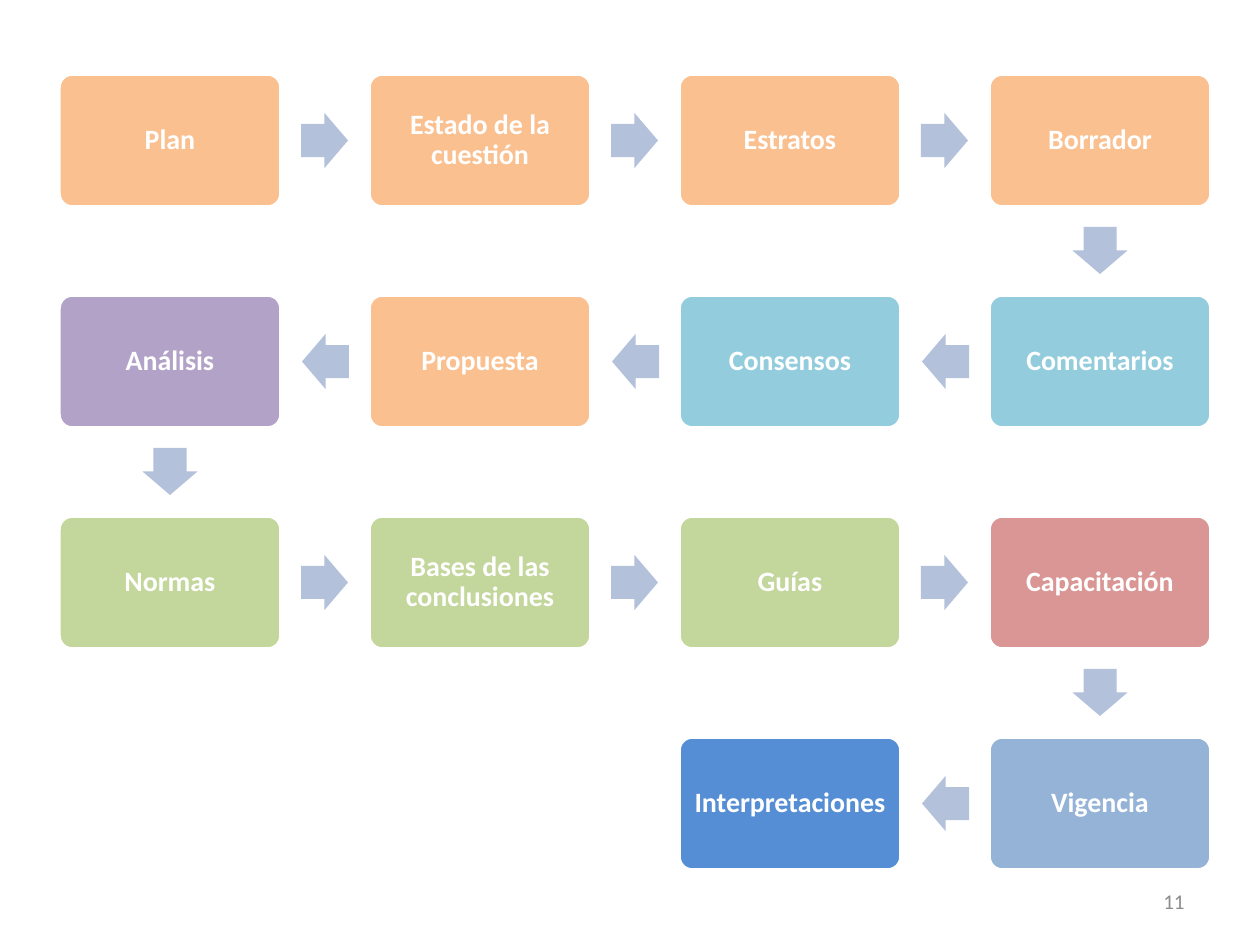
from pptx import Presentation
from pptx.dml.color import RGBColor
from pptx.enum.shapes import MSO_SHAPE
from pptx.enum.text import MSO_ANCHOR, PP_ALIGN
from pptx.util import Pt

SCALE = 914400 / 126  # EMU per px

COLORS = {
    "orange": "FAC090", "aqua": "93CDDD", "purple": "B3A2C7",
    "green": "C3D69B", "red": "D99694", "pale_blue": "95B3D7",
    "blue": "558ED5", "arrow": "B3C1DB", "white": "FFFFFF", "grey": "8C8C8C",
}

# Steps in reading order of the winding path
STEPS = [
    ("Plan", "orange"), ("Estado de la cuestión", "orange"),
    ("Estratos", "orange"), ("Borrador", "orange"),
    ("Comentarios", "aqua"), ("Consensos", "aqua"),
    ("Propuesta", "orange"), ("Análisis", "purple"),
    ("Normas", "green"), ("Bases de las conclusiones", "green"),
    ("Guías", "green"), ("Capacitación", "red"),
    ("Vigencia", "pale_blue"), ("Interpretaciones", "blue"),
]
COLUMNS = 4
STEP_WIDTH, STEP_HEIGHT = 222, 133
PITCH_X, PITCH_Y = 310, 221
ARROW_WIDTH, ARROW_HEIGHT = 47, 55
ARROW_GAP = 20


def px(value):
    return round(value * SCALE)


def color(name):
    return RGBColor.from_string(COLORS[name])


def add_block(page, kind, box, fill):
    block = page.shapes.add_shape(kind, *map(px, box))
    block.shadow.inherit = False
    block.fill.solid()
    block.fill.fore_color.rgb = color(fill)
    return block


def set_text(frame, text, size, font_color, align, bold=False):
    frame.text = text
    frame.word_wrap = True
    frame.vertical_anchor = MSO_ANCHOR.MIDDLE
    paragraph = frame.paragraphs[0]
    paragraph.alignment = align
    font = paragraph.runs[0].font
    font.name, font.size, font.bold = "Calibri", Pt(size), bold
    font.color.rgb = color(font_color)
    return paragraph


def add_step(page, box, text, fill):
    step = add_block(page, MSO_SHAPE.ROUNDED_RECTANGLE, box, fill)
    step.adjustments[0] = 0.1
    step.line.color.rgb = color("white")
    step.line.width = Pt(2)
    frame = step.text_frame
    frame.margin_left = frame.margin_right = px(5)
    frame.margin_top = frame.margin_bottom = px(5)
    paragraph = set_text(frame, text, 16, "white", PP_ALIGN.CENTER, bold=True)
    paragraph.line_spacing = 0.9


def add_arrow(page, center_x, center_y, rotation):
    box = (center_x - ARROW_WIDTH / 2, center_y - ARROW_HEIGHT / 2,
           ARROW_WIDTH, ARROW_HEIGHT)
    arrow = add_block(page, MSO_SHAPE.RIGHT_ARROW, box, "arrow")
    arrow.adjustments[0] = 0.6
    arrow.adjustments[1] = 0.5
    arrow.line.fill.background()
    arrow.rotation = rotation


def grid_cell(index):
    row, column = divmod(index, COLUMNS)
    return row, column if row % 2 == 0 else COLUMNS - 1 - column


def add_process(page, left, top):
    reach_x = STEP_WIDTH / 2 + ARROW_GAP + ARROW_WIDTH / 2
    reach_y = STEP_HEIGHT / 2 + ARROW_GAP + ARROW_WIDTH / 2
    for index, (text, fill) in enumerate(STEPS):
        row, column = grid_cell(index)
        x, y = left + column * PITCH_X, top + row * PITCH_Y
        add_step(page, (x, y, STEP_WIDTH, STEP_HEIGHT), text, fill)
        if index == len(STEPS) - 1:
            break
        # Arrow towards the next step
        next_row, next_column = grid_cell(index + 1)
        across, down = next_column - column, next_row - row
        rotation = 90 if down else 0 if across > 0 else 180
        add_arrow(page, x + STEP_WIDTH / 2 + across * reach_x,
                  y + STEP_HEIGHT / 2 + down * reach_y, rotation)


def add_page_number(page, box):
    number = page.shapes.add_textbox(*map(px, box))
    set_text(number.text_frame, "11", 12, "grey", PP_ALIGN.RIGHT)


def main():
    deck = Presentation()
    deck.slide_width, deck.slide_height = px(1260), px(945)
    page = deck.slides.add_slide(deck.slide_layouts[6])
    add_process(page, 59, 74)
    add_page_number(page, (903, 876, 294, 50))
    deck.save("out.pptx")


if __name__ == "__main__":
    main()
